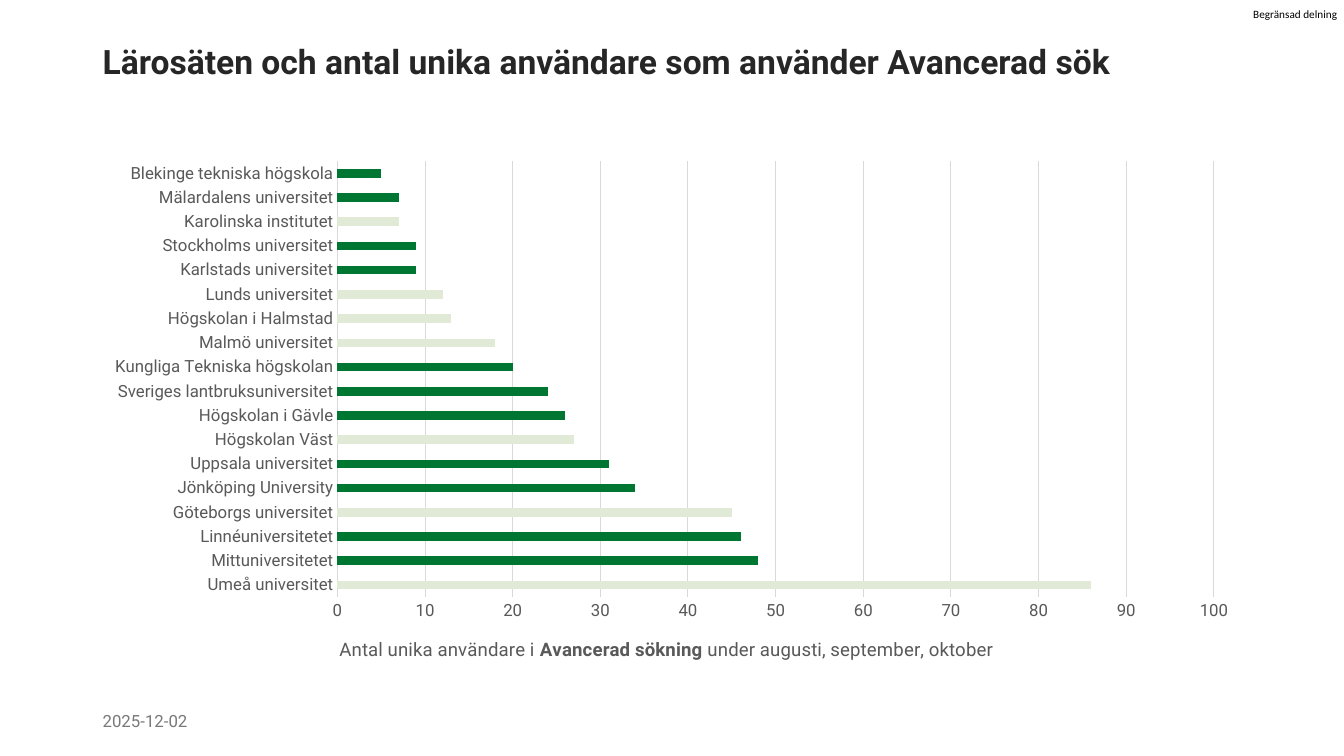
from dataclasses import dataclass

from lxml.etree import SubElement
from pptx import Presentation
from pptx.chart.data import CategoryChartData
from pptx.dml.color import RGBColor
from pptx.enum.chart import XL_CHART_TYPE, XL_TICK_MARK
from pptx.enum.text import MSO_ANCHOR, PP_ALIGN
from pptx.oxml.ns import qn
from pptx.util import Inches, Pt


@dataclass(frozen=True)
class Theme:
    font: str = "Roboto"
    label_font: str = "Calibri"
    title_color: RGBColor = RGBColor(0x26, 0x26, 0x26)
    label_color: RGBColor = RGBColor(0, 0, 0)
    axis_color: RGBColor = RGBColor(0x59, 0x59, 0x59)
    date_color: RGBColor = RGBColor(0x79, 0x79, 0x79)
    grid_color: RGBColor = RGBColor(0xD9, 0xD9, 0xD9)
    light_bar: RGBColor = RGBColor(0xE0, 0xEA, 0xD7)
    dark_bar: RGBColor = RGBColor(0x00, 0x76, 0x33)
    title_size: float = 24
    axis_title_size: float = 13.3
    body_size: float = 12
    label_size: float = 8


THEME = Theme()

USERS = [
    ("Umeå universitet", 86, False),
    ("Mittuniversitetet", 48, True),
    ("Linnéuniversitetet", 46, True),
    ("Göteborgs universitet", 45, False),
    ("Jönköping University", 34, True),
    ("Uppsala universitet", 31, True),
    ("Högskolan Väst", 27, False),
    ("Högskolan i Gävle", 26, True),
    ("Sveriges lantbruksuniversitet", 24, True),
    ("Kungliga Tekniska högskolan", 20, True),
    ("Malmö universitet", 18, False),
    ("Högskolan i Halmstad", 13, False),
    ("Lunds universitet", 12, False),
    ("Karlstads universitet", 9, True),
    ("Stockholms universitet", 9, True),
    ("Karolinska institutet", 7, False),
    ("Mälardalens universitet", 7, True),
    ("Blekinge tekniska högskola", 5, True),
]

AXIS_TITLE = [
    ("Antal unika användare i ", False),
    ("Avancerad sökning", True),
    (" under augusti, september, oktober", False),
]


def style_font(font, size, color, name=THEME.font, bold=False):
    font.size = Pt(size)
    font.name = name
    font.bold = bold
    font.color.rgb = color


def add_text(slide, box, text, size, color, name=THEME.font, bold=False):
    shape = slide.shapes.add_textbox(*map(Inches, box))
    frame = shape.text_frame
    frame.word_wrap = True
    frame.vertical_anchor = MSO_ANCHOR.MIDDLE
    frame.text = text
    style_font(frame.paragraphs[0].runs[0].font, size, color, name, bold)
    return frame


def add_label(slide, box):
    frame = add_text(slide, box, "Begränsad delning", THEME.label_size,
                     THEME.label_color, THEME.label_font)
    frame.word_wrap = False
    frame.margin_left = frame.margin_right = 0
    frame.margin_top = frame.margin_bottom = 0


def add_title(slide, box):
    frame = add_text(slide, box, "Lärosäten och antal unika användare som använder Avancerad sök",
                     THEME.title_size, THEME.title_color, bold=True)
    frame.paragraphs[0].line_spacing = 0.9


def add_date(slide, box):
    add_text(slide, box, "2025-12-02", THEME.body_size, THEME.date_color)


def set_layout(parent, position, **settings):
    for layout in parent.findall(qn("c:layout")):
        parent.remove(layout)
    layout = SubElement(parent, qn("c:layout"))
    manual = SubElement(layout, qn("c:manualLayout"))
    for tag, value in settings.items():
        SubElement(manual, qn(f"c:{tag}")).set("val", str(value))
    parent.insert(position, layout)


def style_axis(axis):
    axis.major_tick_mark = axis.minor_tick_mark = XL_TICK_MARK.NONE
    style_font(axis.tick_labels.font, THEME.body_size, THEME.axis_color)


def add_axis_title(axis):
    frame = axis.axis_title.text_frame
    paragraph = frame.paragraphs[0]
    paragraph.alignment = PP_ALIGN.CENTER
    for text, bold in AXIS_TITLE:
        run = paragraph.add_run()
        run.text = text
        style_font(run.font, THEME.axis_title_size, THEME.axis_color, bold=bold)
    set_layout(axis.axis_title.element, 1, xMode="edge", yMode="edge", x=0.21, y=0.91)


def add_user_chart(slide, box):
    data = CategoryChartData()
    data.categories = [name for name, _, _ in USERS]
    data.add_series("Antal unika användare", [count for _, count, _ in USERS])
    chart = slide.shapes.add_chart(
        XL_CHART_TYPE.BAR_CLUSTERED, *map(Inches, box), data).chart
    chart.has_title = False
    chart.has_legend = False
    style_font(chart.font, THEME.body_size, THEME.axis_color)

    plot = chart.plots[0]
    plot.gap_width = 182
    plot.vary_by_categories = False
    series = plot.series[0]
    series.format.fill.solid()
    series.format.fill.fore_color.rgb = THEME.light_bar
    for index, (_, _, highlighted) in enumerate(USERS):
        if highlighted:
            fill = series.points[index].format.fill
            fill.solid()
            fill.fore_color.rgb = THEME.dark_bar

    categories, values = chart.category_axis, chart.value_axis
    style_axis(categories)
    style_axis(values)
    values.minimum_scale, values.maximum_scale, values.major_unit = 0, 100, 10
    values.format.line.fill.background()
    values.has_major_gridlines = True
    for line in (categories.format.line, values.major_gridlines.format.line):
        line.color.rgb = THEME.grid_color
        line.width = Pt(0.75)
    add_axis_title(values)
    plot_area = chart.element.find(f".//{qn('c:plotArea')}")
    set_layout(plot_area, 0, layoutTarget="inner", xMode="edge", yMode="edge",
               x=0.211, y=0.019, w=0.756, h=0.822)


def main():
    presentation = Presentation()
    presentation.slide_width = Inches(13.33)
    presentation.slide_height = Inches(7.5)
    slide = presentation.slides.add_slide(presentation.slide_layouts[6])
    left, width = 0.92, 11.5
    add_label(slide, (12.43, 0.07, 0.86, 0.13))
    add_title(slide, (left, 0.15, width, 0.96))
    add_user_chart(slide, (left, 1.5, width, 5.26))
    add_date(slide, (left, 6.95, 3, 0.4))
    presentation.save("out.pptx")


if __name__ == "__main__":
    main()
